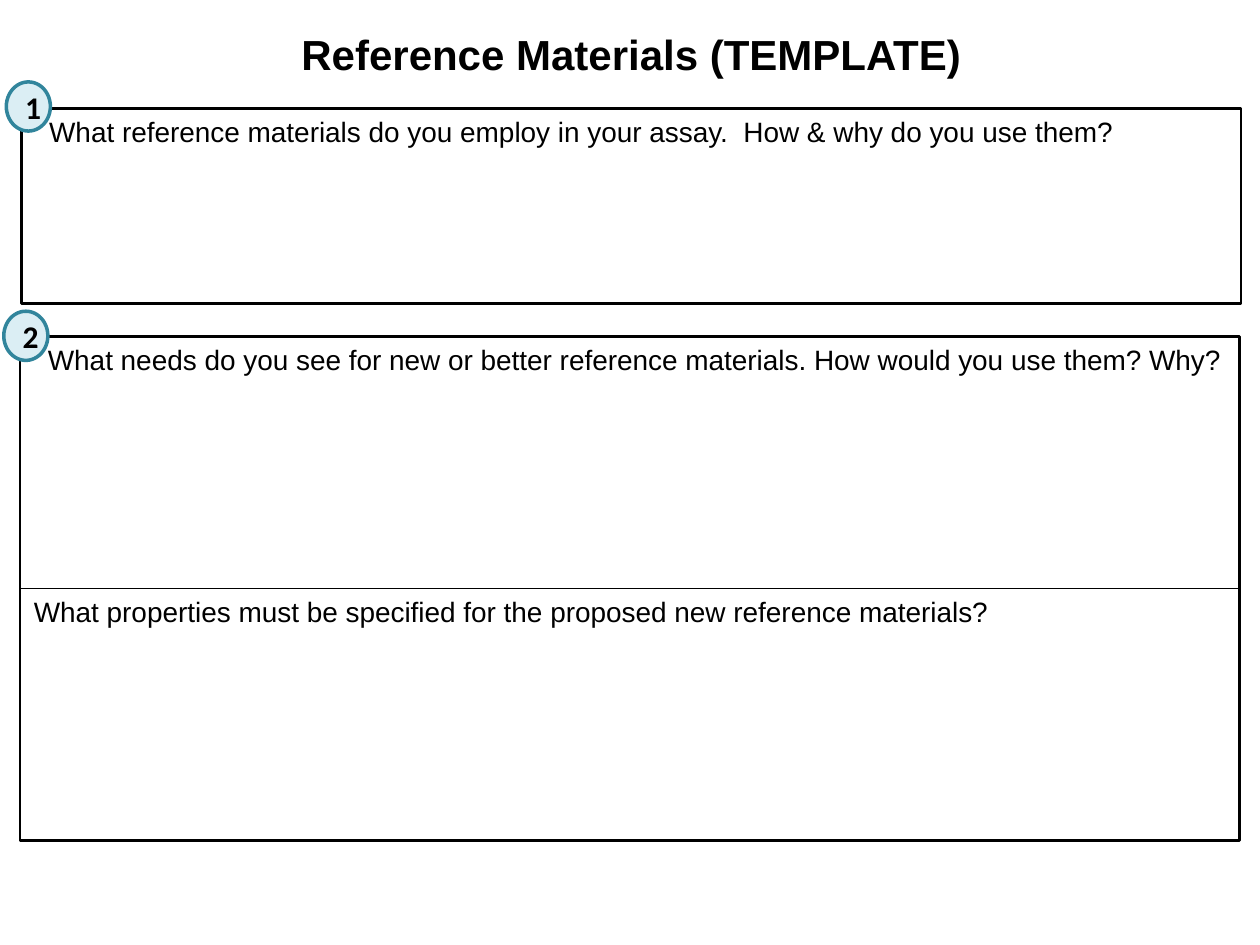
from dataclasses import dataclass

from lxml import etree
from pptx import Presentation
from pptx.dml.color import RGBColor
from pptx.enum.shapes import MSO_CONNECTOR, MSO_SHAPE
from pptx.enum.text import MSO_ANCHOR, MSO_AUTO_SIZE, PP_ALIGN
from pptx.oxml.ns import qn
from pptx.shapes.autoshape import Shape
from pptx.util import Inches, Pt

RECTANGLE, OVAL = MSO_SHAPE.RECTANGLE, MSO_SHAPE.OVAL
STRAIGHT = MSO_CONNECTOR.STRAIGHT
LEFT, CENTER = PP_ALIGN.LEFT, PP_ALIGN.CENTER
TOP, MIDDLE = MSO_ANCHOR.TOP, MSO_ANCHOR.MIDDLE
FIT_SHAPE = MSO_AUTO_SIZE.SHAPE_TO_FIT_TEXT
LEFT_SIDE, RIGHT_SIDE = 1, 3

COLORS = {"ink": "000000", "badge_fill": "DBEEF4", "badge_line": "31859C"}
PANEL_WIDTH = 9.68
BADGE_WIDTH, BADGE_HEIGHT = 0.35, 0.39
TEXT_INSET = 0.1
BADGE_CLEARANCE = 0.12


@dataclass
class Panel:
    left: float
    top: float
    height: float
    question: str
    number: str
    badge_left: float
    badge_top: float


PANELS = [
    Panel(0.17, 0.86, 1.55,
          "What reference materials do you employ in your assay.  How & why do you use them?",
          "1", 0.05, 0.65),
    Panel(0.16, 2.67, 4,
          "What needs do you see for new or better reference materials. "
          "How would you use them? Why?",
          "2", 0.03, 2.47),
]


def color(name: str) -> RGBColor:
    return RGBColor.from_string(COLORS[name])


def write_text(shape: Shape, text: str, *, size: float = 16, font: str = "Arial",
               bold: bool = False, align: PP_ALIGN = LEFT, anchor: MSO_ANCHOR = TOP,
               inset: float = TEXT_INSET) -> None:
    frame = shape.text_frame
    frame.word_wrap = True
    frame.vertical_anchor = anchor
    frame.margin_left = Inches(inset)
    paragraph = frame.paragraphs[0]
    paragraph.alignment = align
    run = paragraph.add_run()
    run.text = text
    run.font.name = font
    run.font.size = Pt(size)
    run.font.bold = bold
    run.font.color.rgb = color("ink")


def add_outlined(shapes, kind: MSO_SHAPE, left: float, top: float, width: float,
                 height: float, line: str, line_width: float) -> Shape:
    shape = shapes.add_shape(kind, Inches(left), Inches(top), Inches(width), Inches(height))
    shape.shadow.inherit = False
    shape.fill.background()
    shape.line.color.rgb = color(line)
    shape.line.width = Pt(line_width)
    return shape


def add_panel(shapes, panel: Panel) -> Shape:
    frame = add_outlined(shapes, RECTANGLE, panel.left, panel.top, PANEL_WIDTH,
                         panel.height, "ink", 1.5)
    write_text(frame, panel.question, inset=TEXT_INSET + BADGE_CLEARANCE)
    return frame


def add_badge(shapes, panel: Panel) -> None:
    badge = add_outlined(shapes, OVAL, panel.badge_left, panel.badge_top, BADGE_WIDTH,
                         BADGE_HEIGHT, "badge_line", 2)
    badge.fill.solid()
    badge.fill.fore_color.rgb = color("badge_fill")
    write_text(badge, panel.number, size=18, font="Calibri", bold=True,
               align=CENTER, anchor=MIDDLE)


def add_label(shapes, left: float, top: float, width: float, height: float,
              text: str, **text_format) -> None:
    label = shapes.add_textbox(Inches(left), Inches(top), Inches(width), Inches(height))
    write_text(label, text, **text_format)
    label.text_frame.auto_size = FIT_SHAPE


def add_divider(shapes, frame: Shape) -> None:
    """Split a panel in two halves with a line joined to its sides."""
    divider = shapes.add_connector(STRAIGHT, 0, 0, 0, 0)
    divider.begin_connect(frame, LEFT_SIDE)
    divider.end_connect(frame, RIGHT_SIDE)
    divider.line.color.rgb = color("ink")
    divider.line.width = Pt(0.75)
    etree.SubElement(divider._element.spPr, qn("a:effectLst"))


def main() -> None:
    deck = Presentation()
    deck.slide_width, deck.slide_height = Inches(10), Inches(7.5)
    shapes = deck.slides.add_slide(deck.slide_layouts[6]).shapes

    frames = [add_panel(shapes, panel) for panel in PANELS]
    for panel in PANELS:
        add_badge(shapes, panel)

    add_label(shapes, 0.01, 0.18, 10, 0.5, "Reference Materials (TEMPLATE)",
              size=24, bold=True, align=CENTER)

    needs = PANELS[-1]
    add_divider(shapes, frames[-1])
    add_label(shapes, 0.17, needs.top + needs.height / 2, 9.33, 0.37,
              "What properties must be specified for the proposed new reference materials?")
    deck.save("out.pptx")


if __name__ == "__main__":
    main()
